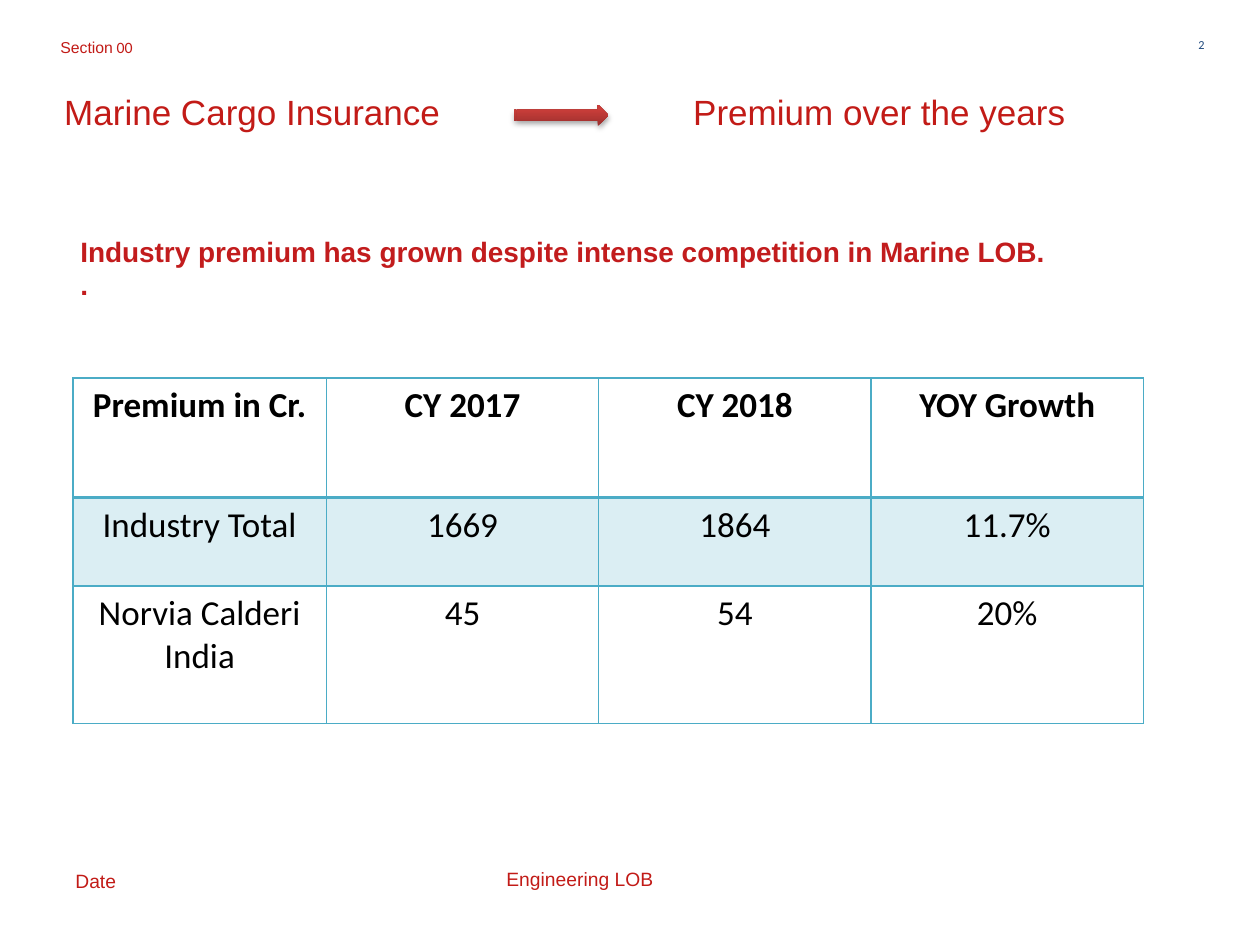
import copy

import pptx
import pptx.dml.color
import pptx.enum.shapes
import pptx.enum.text
import pptx.oxml
import pptx.oxml.ns
import pptx.util
from lxml import etree

Cm, Pt = pptx.util.Cm, pptx.util.Pt
ALIGN = pptx.enum.text.PP_ALIGN
ANCHOR = pptx.enum.text.MSO_ANCHOR
qn = pptx.oxml.ns.qn

# Content
TITLE = "Marine Cargo Insurance\tPremium over the years"
HEADLINE = [
    "Industry premium has grown despite intense competition in Marine LOB.",
    ".",
]
TABLE = [
    ["Premium in Cr.", "CY 2017", "CY 2018", "YOY Growth"],
    ["Industry Total", "1669", "1864", "11.7%"],
    ["Norvia Calderi India", "45", "54", "20%"],
]
COLUMN_WIDTHS = [5.11, 5.49, 5.49, 5.49]
ROW_HEIGHTS = [2.41, 1.78, 2.77]

THEME = {
    "red": "C21B17", "headline": "C21C1D", "navy": "1F497D", "black": "000000",
    "teal": "4BACC6", "arrow": [(0, "9C2F2D"), (0.8, "CB3E3A"), (1, "CE3B37")],
    "sans": "Arial", "body": "Calibri",
    "title_size": 20, "table_size": 20, "headline_size": 16,
    "footer_size": 11, "section_size": 9, "number_size": 7,
}


def rgb(name):
    return pptx.dml.color.RGBColor.from_string(THEME.get(name, name))


def add_span(para, text, size, color, font="sans", bold=False):
    span = para.add_run()
    span.text = text
    span.font.name = THEME[font]
    span.font.size = Pt(THEME[size])
    span.font.bold = bold
    span.font.color.rgb = rgb(color)


def add_box(page, left, top, width, height, paragraphs, align=ALIGN.LEFT, inset=None):
    """Each paragraph is a list of spans: (text, size, color, font, bold)."""
    frame = page.shapes.add_textbox(Cm(left), Cm(top), Cm(width), Cm(height)).text_frame
    frame.word_wrap = True
    if inset is not None:
        frame.margin_left = frame.margin_right = Cm(inset)
        frame.margin_top = frame.margin_bottom = Cm(inset)
    for index, spans in enumerate(paragraphs):
        para = frame.add_paragraph() if index else frame.paragraphs[0]
        para.alignment = align
        for span in spans:
            add_span(para, *span)


def add_title(page):
    title = page.shapes.title
    title.left, title.top, title.width, title.height = Cm(1.04), Cm(1.75), Cm(23.29), Cm(1)
    frame = title.text_frame
    frame.word_wrap = True
    frame.auto_size = pptx.enum.text.MSO_AUTO_SIZE.NONE
    frame.vertical_anchor = ANCHOR.MIDDLE
    para = frame.paragraphs[0]
    para.alignment = ALIGN.LEFT
    # The tab stop places the second half after the arrow
    tabs = etree.SubElement(para._p.get_or_add_pPr(), qn("a:tabLst"))
    etree.SubElement(tabs, qn("a:tab"), pos=str(Cm(12.68)), algn="l")
    add_span(para, TITLE, "title_size", "red")


def add_arrow(page):
    arrow = page.shapes.add_shape(
        pptx.enum.shapes.MSO_SHAPE.STRIPED_RIGHT_ARROW, Cm(10.36), Cm(2.11), Cm(1.91), Cm(0.43))
    arrow.line.fill.background()
    arrow.fill.gradient()
    arrow.fill.gradient_angle = 90
    stop_list = arrow._element.spPr.find(".//" + qn("a:gsLst"))
    stop_list.append(copy.deepcopy(stop_list[-1]))
    for stop, (position, color) in zip(arrow.fill.gradient_stops, THEME["arrow"]):
        stop.position = position
        stop.color.rgb = rgb(color)
    # Soft shadow straight below
    arrow.shadow.inherit = False
    effects = arrow._element.spPr.find(qn("a:effectLst"))
    shadow = etree.SubElement(effects, qn("a:outerShdw"), blurRad=str(Pt(3.1)),
                              dist=str(Pt(1.8)), dir="5400000", rotWithShape="0")
    color = etree.SubElement(shadow, qn("a:srgbClr"), val=THEME["black"])
    etree.SubElement(color, qn("a:alpha"), val="35000")


def set_borders(cell, widths):
    properties = cell._tc.get_or_add_tcPr()
    for side, width in widths.items():
        line = etree.SubElement(properties, qn("a:ln" + side), w=str(Pt(width)))
        fill = etree.SubElement(line, qn("a:solidFill"))
        etree.SubElement(fill, qn("a:srgbClr"), val=THEME["teal"])


def add_premium_table(page):
    table = page.shapes.add_table(
        len(TABLE), len(TABLE[0]), Cm(1.47), Cm(7.62),
        Cm(sum(COLUMN_WIDTHS)), Cm(sum(ROW_HEIGHTS))).table
    table.first_row = table.horz_banding = False
    for column, width in zip(table.columns, COLUMN_WIDTHS):
        column.width = Cm(width)
    for index, (texts, height) in enumerate(zip(TABLE, ROW_HEIGHTS)):
        table.rows[index].height = Cm(height)
        for cell, text in zip(table.rows[index].cells, texts):
            # The rule under the header is heavier
            set_borders(cell, {"L": 1, "R": 1, "T": 2 if index == 1 else 1,
                               "B": 2 if index == 0 else 1})
            if index == 1:
                cell.fill.solid()
                cell.fill.fore_color.rgb = rgb("teal")
                tint = cell._tc.tcPr.find(qn("a:solidFill"))[0]
                etree.SubElement(tint, qn("a:alpha"), val="20000")
            else:
                cell.fill.background()
            para = cell.text_frame.paragraphs[0]
            para.alignment = ALIGN.CENTER
            add_span(para, text, "table_size", "black", "body", bold=index == 0)


def main():
    deck = pptx.Presentation()
    deck.slide_width, deck.slide_height = Cm(25.4), Cm(19.05)
    page = deck.slides.add_slide(deck.slide_layouts[5])

    add_title(page)

    # Footer
    add_box(page, 1.27, 17.4, 1.47, 1.02, [[("Date", "footer_size", "red")]])
    add_box(page, 9.96, 17.35, 3.81, 1.02, [[("Engineering LOB", "footer_size", "red")]])

    add_arrow(page)

    # Page number and section
    add_box(page, 23.72, 0.76, 0.56, 0.51, [[("2", "number_size", "navy", "body")]],
            ALIGN.RIGHT, inset=0)
    add_box(page, 0.97, 0.64, 6.17, 0.46, [[("Section", "section_size", "red"),
                                            (" 00", "section_size", "red", "body")]])

    add_premium_table(page)

    # Headline
    add_box(page, 1.37, 4.6, 21.82, 1.63,
            [[(text, "headline_size", "headline", "sans", True)] for text in HEADLINE])

    deck.save("out.pptx")


if __name__ == "__main__":
    main()
